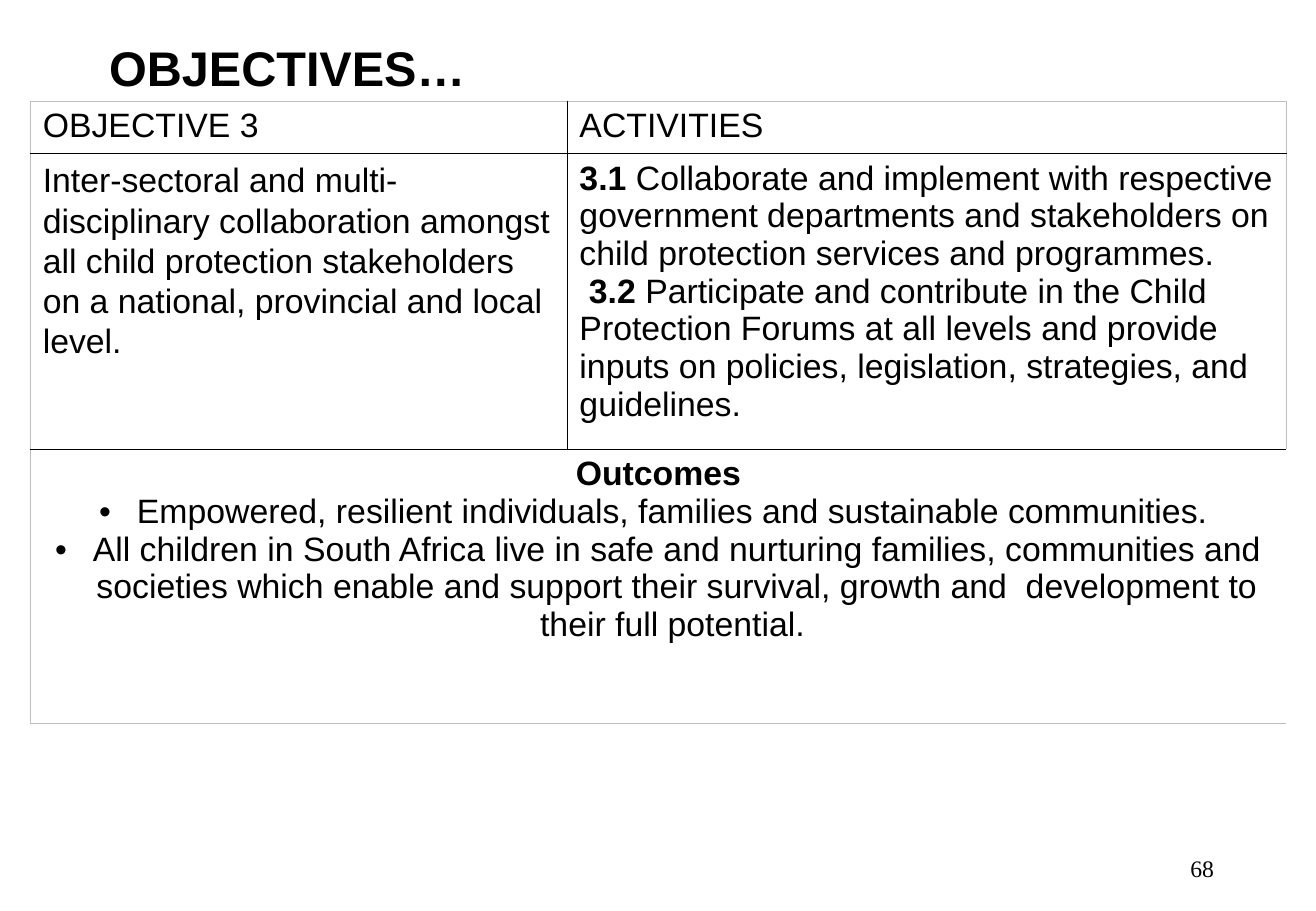
from dataclasses import dataclass

from lxml import etree
from pptx import Presentation
from pptx.dml.color import RGBColor
from pptx.enum.text import MSO_ANCHOR, PP_ALIGN
from pptx.oxml.ns import qn
from pptx.util import Cm, Pt

LEFT, CENTER, RIGHT = PP_ALIGN.LEFT, PP_ALIGN.CENTER, PP_ALIGN.RIGHT
MIDDLE = MSO_ANCHOR.MIDDLE


@dataclass(frozen=True)
class Theme:
    ink: str = "000000"
    paper: str = "FFFFFF"
    frame: str = "BFBFBF"
    body_font: str = "Arial"
    number_font: str = "Times New Roman"
    title_size: float = 28.8
    body_size: float = 20
    number_size: float = 14
    rule_width: float = 1
    frame_width: float = 0.5


@dataclass(frozen=True)
class Para:
    """A paragraph whose opening characters, lead, are bold."""
    text: str
    lead: str = ""
    align: int = LEFT
    bullet: bool = False
    spacing: float = 1.0
    after: float = 0


class SlideBuilder:
    def __init__(self, prs, theme):
        self.theme = theme
        self.s = prs.slides.add_slide(prs.slide_layouts[6])

    def style_run(self, r, font, size, bold=False):
        r.font.name, r.font.size, r.font.bold = font, Pt(size), bold
        r.font.color.rgb = RGBColor.from_string(self.theme.ink)

    def textbox(self, box, text, font, size, align=LEFT, bold=False):
        tf = self.s.shapes.add_textbox(*(Cm(v) for v in box)).text_frame
        tf.word_wrap = True
        tf.vertical_anchor = MIDDLE
        tf.text = text
        p = tf.paragraphs[0]
        p.alignment = align
        self.style_run(p.runs[0], font, size, bold)

    def table(self, left, top, widths, heights, rows):
        """Draw rows of paragraph lists; a short row spans the full width."""
        tbl = self.s.shapes.add_table(
            len(heights), len(widths), Cm(left), Cm(top),
            Cm(sum(widths)), Cm(sum(heights))).table
        tbl.first_row = tbl.horz_banding = False
        for col, width in zip(tbl.columns, widths):
            col.width = Cm(width)
        for row, height in zip(tbl.rows, heights):
            row.height = Cm(height)
        last_row, last_col = len(heights) - 1, len(widths) - 1
        for i, row in enumerate(rows):
            merged = len(row) < len(widths)
            if merged:
                tbl.cell(i, 0).merge(tbl.cell(i, last_col))
            for j in range(len(widths)):
                cell = tbl.cell(i, j)
                cell.fill.solid()
                cell.fill.fore_color.rgb = RGBColor.from_string(self.theme.paper)
                outer = {"a:lnL": j == 0, "a:lnR": j == last_col,
                         "a:lnT": i == 0, "a:lnB": i == last_row}
                if merged:
                    outer.pop("a:lnR" if j == 0 else "a:lnL")
                self.borders(cell, outer)
            for j, paras in enumerate(row):
                self.fill_cell(tbl.cell(i, j), paras)

    def borders(self, cell, outer):
        """Give each named edge the frame line if outer, else the rule line."""
        t = self.theme
        props = cell._tc.get_or_add_tcPr()
        for k, (tag, on_frame) in enumerate(outer.items()):
            width, color = ((t.frame_width, t.frame) if on_frame
                            else (t.rule_width, t.ink))
            ln = etree.Element(qn(tag), w=str(Pt(width)))
            fill = etree.SubElement(ln, qn("a:solidFill"))
            etree.SubElement(fill, qn("a:srgbClr"), val=color)
            props.insert(k, ln)

    def fill_cell(self, cell, paras):
        t = self.theme
        tf = cell.text_frame
        for k, para in enumerate(paras):
            p = tf.add_paragraph() if k else tf.paragraphs[0]
            p.alignment = para.align
            p.line_spacing = para.spacing
            p.space_after = Pt(para.after)
            if para.bullet:
                self.bullet(p)
            for text, bold in ((para.lead, True), (para.text, False)):
                if text:
                    r = p.add_run()
                    r.text = text
                    self.style_run(r, t.body_font, t.body_size, bold)

    def bullet(self, p):
        props = p._p.get_or_add_pPr()
        props.set("marL", str(Cm(0.79)))
        props.set("indent", str(-Cm(0.79)))
        etree.SubElement(props, qn("a:buFont"), typeface=self.theme.body_font)
        etree.SubElement(props, qn("a:buChar"), char="•")


ROWS = [
    [[Para("OBJECTIVE 3")], [Para("ACTIVITIES")]],
    [[Para("Inter-sectoral and multi-disciplinary collaboration amongst all "
           "child protection stakeholders on a national, provincial and "
           "local level.", spacing=1.07, after=9)],
     [Para("Collaborate and implement with respective government departments "
           "and stakeholders on child protection services and programmes.",
           lead="3.1 "),
      Para("Participate and contribute in the Child Protection Forums at all "
           "levels and provide inputs on policies, legislation, strategies, "
           "and guidelines.", lead=" 3.2 ")]],
    [[Para("", lead="Outcomes", align=CENTER),
      Para("Empowered, resilient individuals, families and sustainable "
           "communities. ", align=CENTER, bullet=True),
      Para("All children in South Africa live in safe and nurturing families, "
           "communities and societies which enable and support their "
           "survival, growth and  development to their full potential. ",
           align=CENTER, bullet=True)]],
]


def main():
    prs = Presentation()
    prs.slide_width, prs.slide_height = Cm(27.51), Cm(19.05)
    theme = Theme()
    slide = SlideBuilder(prs, theme)
    slide.textbox((2.03, 0.65, 22.5, 1.5), "OBJECTIVES…",
                  theme.body_font, theme.title_size, bold=True)
    slide.table(0.64, 2.11, (11.22, 15.03), (1.04, 5.77, 5.74), ROWS)
    slide.textbox((19.43, 17.65, 6.2, 1.02), "68",
                  theme.number_font, theme.number_size, align=RIGHT)
    prs.save("out.pptx")


if __name__ == "__main__":
    main()
